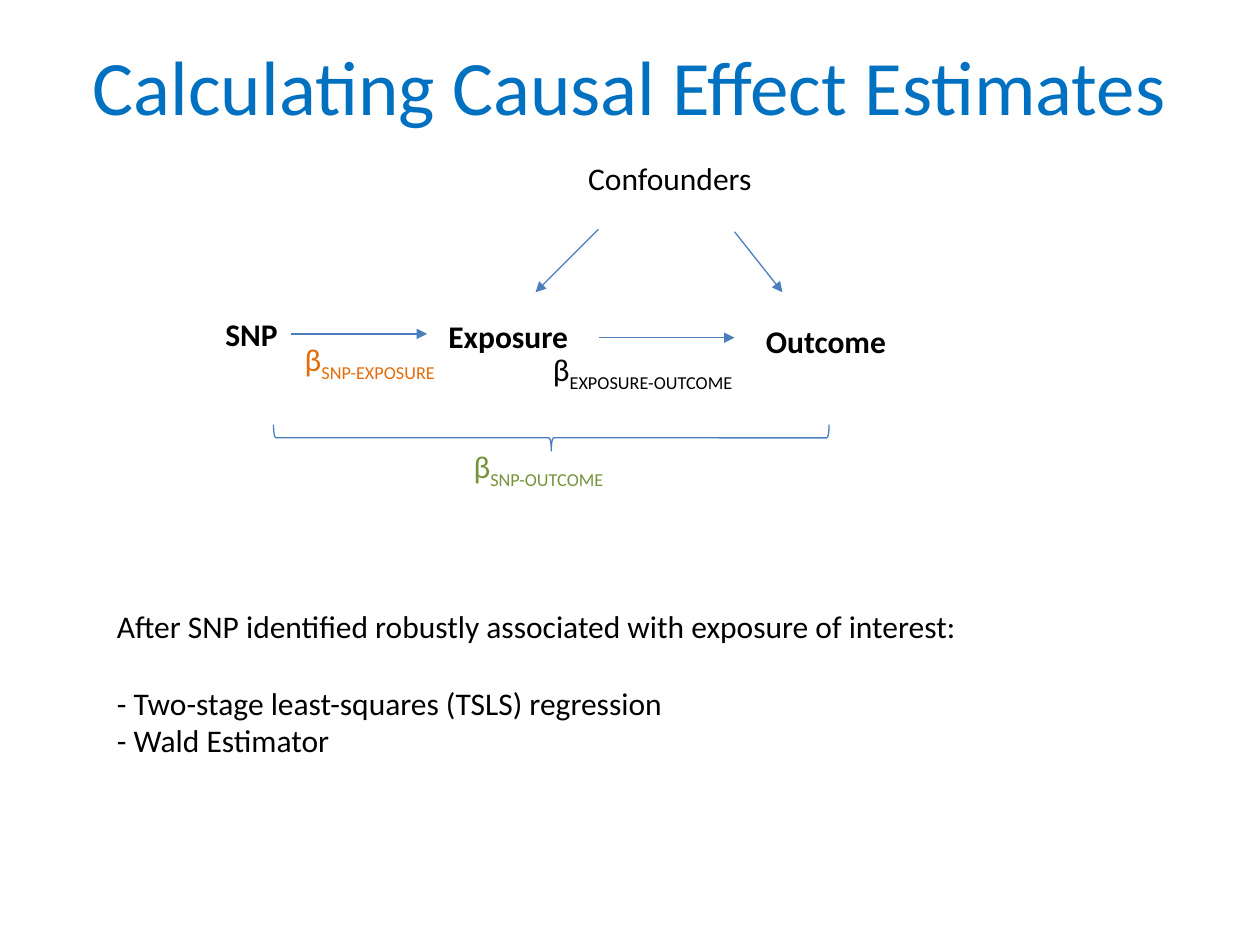
import lxml.etree
import pptx
import pptx.dml.color
import pptx.enum.shapes
import pptx.enum.text
import pptx.oxml.ns
import pptx.util

deck = pptx.Presentation()
deck.slide_width = pptx.util.Inches(10)
deck.slide_height = pptx.util.Inches(7.5)
page = deck.slides.add_slide(deck.slide_layouts[6])

# Grid of 100 columns by 75 rows
COLUMN = deck.slide_width / 100
ROW = deck.slide_height / 75
BLACK, BLUE = "000000", "4B7EBC"
SHAPES = pptx.enum.shapes
TEXT = pptx.enum.text


def color(value):
    return pptx.dml.color.RGBColor.from_string(value)


def grid(*lengths):
    """Turn alternating columns and rows into slide lengths."""
    return [round(length * unit) for length, unit in zip(lengths, (COLUMN, ROW) * 2)]


# Text boxes: place, wrap, paragraphs of (text, subscript), font
label = {"size": pptx.util.Pt(18), "name": "Calibri", "bold": False}
strong = {**label, "bold": True}
heading = {**label, "size": pptx.util.Pt(44)}
steps = [
    ("After SNP identified robustly associated with exposure of interest:", ""),
    ("- Two-stage least-squares (TSLS) regression", ""),
    ("- Wald Estimator", ""),
]
texts = [
    ((5, 0.5, 90, 12.5), True, [("Calculating Causal Effect Estimates", "")], heading, "0070C0"),
    ((16.9, 24.5, 10.8, 4), True, [("SNP", "")], strong, BLACK),
    ((34.6, 24.7, 19.5, 4), True, [("Exposure", "")], strong, BLACK),
    ((59.8, 25.1, 21.1, 4), True, [("Outcome", "")], strong, BLACK),
    ((45.7, 12.1, 16.4, 4), True, [("Confounders", "")], label, BLACK),
    ((36.6, 35, 13.9, 4), False, [("β", "SNP-OUTCOME")], label, "77933C"),
    ((23.2, 26.5, 13.9, 4), False, [("β", "SNP-EXPOSURE")], label, "E46C0A"),
    ((42.9, 27.3, 19, 4), False, [("β", "EXPOSURE-OUTCOME")], label, BLACK),
    ((8.3, 47.7, 69.5, 13.1), False, steps, label, BLACK),
]
for place, wrap, paragraphs, style, ink in texts:
    box = page.shapes.add_textbox(*grid(*place))
    frame = box.text_frame
    frame.word_wrap = wrap
    for index, (words, subscript) in enumerate(paragraphs):
        para = frame.paragraphs[0] if index == 0 else frame.add_paragraph()
        if index == 1:
            para.space_before = pptx.util.Pt(22)
        for part in filter(None, (words, subscript)):
            span = para.add_run()
            span.text = part
            span.font.color.rgb = color(ink)
            for name, value in style.items():
                setattr(span.font, name, value)
            if part == subscript:
                span._r.get_or_add_rPr().set("baseline", "-25000")
    if style is heading:
        frame.vertical_anchor = TEXT.MSO_ANCHOR.MIDDLE
        frame.paragraphs[0].alignment = TEXT.PP_ALIGN.CENTER
    else:
        frame.auto_size = TEXT.MSO_AUTO_SIZE.SHAPE_TO_FIT_TEXT

# Causal arrows
arrows = [
    (23.1, 26.5, 33.9, 26.5),
    (47.5, 26.8, 58.3, 26.8),
    (47.5, 18.2, 42.5, 23.2),
    (58.3, 18.4, 62.1, 23.2),
]
for ends in arrows:
    arrow = page.shapes.add_connector(SHAPES.MSO_CONNECTOR.STRAIGHT, *grid(*ends))
    arrow.line.color.rgb = color(BLUE)
    arrow.line.width = pptx.util.Pt(0.75)
    properties = arrow._element.spPr
    outline = properties.find(pptx.oxml.ns.qn("a:ln"))
    lxml.etree.SubElement(outline, pptx.oxml.ns.qn("a:tailEnd"), type="triangle")
    lxml.etree.SubElement(properties, pptx.oxml.ns.qn("a:effectLst"))

# Brace from SNP to Outcome
brace = page.shapes.add_shape(SHAPES.MSO_SHAPE.RIGHT_BRACE, *grid(42.7, 12.7, 2.1, 44.1))
brace.rotation = 90
brace.shadow.inherit = False
brace.fill.background()
brace.line.color.rgb = color(BLUE)
brace.line.width = pptx.util.Pt(0.75)

deck.save("out.pptx")
